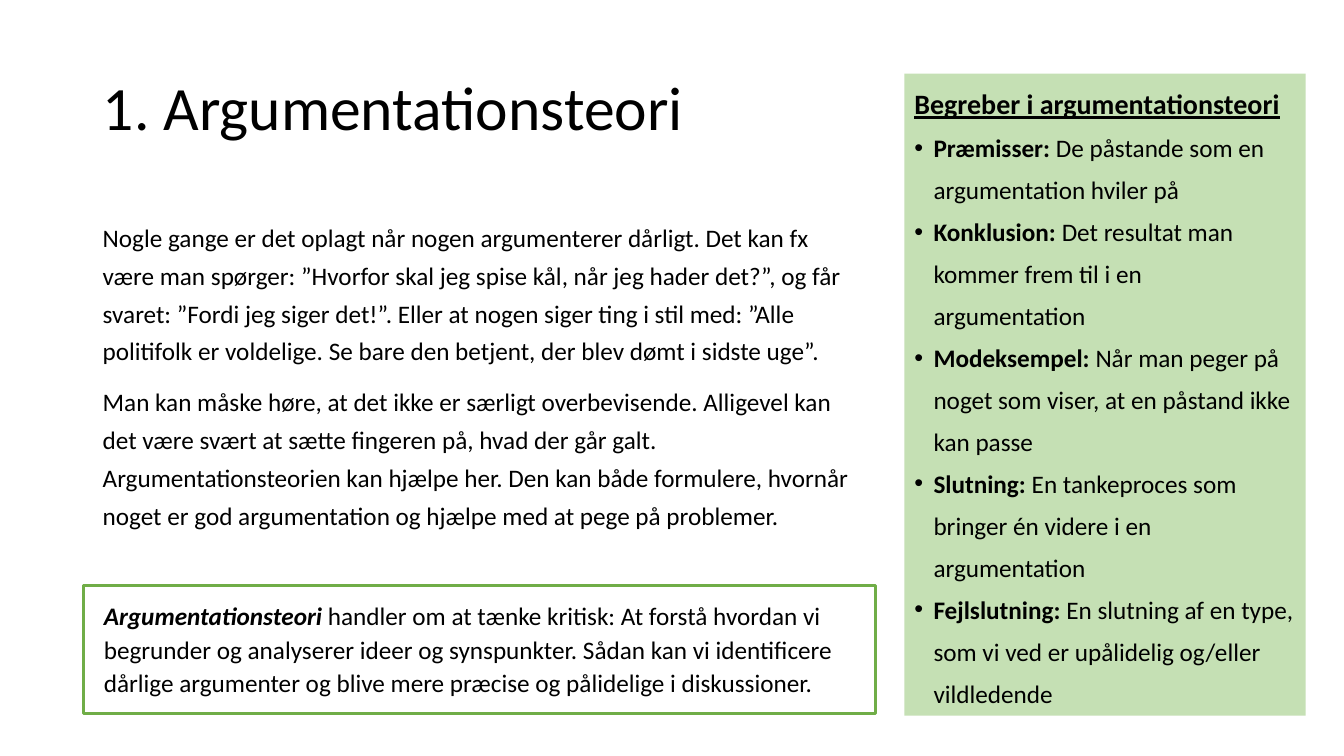
from pptx import Presentation
from pptx.dml.color import RGBColor
from pptx.enum.shapes import MSO_SHAPE
from pptx.enum.text import MSO_ANCHOR, MSO_AUTO_SIZE, PP_ALIGN
from pptx.oxml.ns import qn
from pptx.util import Inches, Pt
from lxml.etree import SubElement

TITLE = "1. Argumentationsteori"
INTRO = [
    "Nogle gange er det oplagt når nogen argumenterer dårligt. Det kan fx være man spørger: "
    "”Hvorfor skal jeg spise kål, når jeg hader det?”, og får svaret: ”Fordi jeg siger det!”. "
    "Eller at nogen siger ting i stil med: ”Alle politifolk er voldelige. Se bare den betjent, "
    "der blev dømt i sidste uge”.",
    "Man kan måske høre, at det ikke er særligt overbevisende. Alligevel kan det være svært at "
    "sætte fingeren på, hvad der går galt. Argumentationsteorien kan hjælpe her. Den kan både "
    "formulere, hvornår noget er god argumentation og hjælpe med at pege på problemer.",
]
CONCEPTS_HEADING = "Begreber i argumentationsteori"
CONCEPTS = [
    ("Præmisser: ", "De påstande som en argumentation hviler på"),
    ("Konklusion: ", "Det resultat man kommer frem til i en argumentation"),
    ("Modeksempel: ", "Når man peger på noget som viser, at en påstand ikke kan passe"),
    ("Slutning: ", "En tankeproces som bringer én videre i en argumentation"),
    ("Fejlslutning: ", "En slutning af en type, som vi ved er upålidelig og/eller vildledende"),
]
DEFINITION = (
    "Argumentationsteori ",
    "handler om at tænke kritisk: At forstå hvordan vi begrunder og analyserer ideer og "
    "synspunkter. Sådan kan vi identificere dårlige argumenter og blive mere præcise og "
    "pålidelige i diskussioner.",
)
BOXES = {
    "title": (0.92, 0.37, 11.5, 1.45),
    "intro": (0.92, 2.08, 7.62, 3.55),
    "concepts": (8.97, 0.73, 3.98, 6.37),
    "definition": (0.83, 5.81, 7.85, 1.27),
}


class Theme:
    font = "Calibri"
    text = RGBColor(0x00, 0x00, 0x00)
    panel = RGBColor(0xC5, 0xE0, 0xB4)
    frame = RGBColor(0x70, 0xAD, 0x47)
    title, heading, body = Pt(44), Pt(20), Pt(18)
    frame_width = Pt(2.25)
    indent = Inches(0.19)


def box(name):
    return [Inches(v) for v in BOXES[name]]


def add_run(p, text, size=Theme.body, **style):
    r = p.add_run()
    r.text = text
    r.font.color.rgb = Theme.text
    for key, value in {"name": Theme.font, "size": size, **style}.items():
        setattr(r.font, key, value)


def setup(tf, **style):
    defaults = {"word_wrap": True, "auto_size": MSO_AUTO_SIZE.NONE,
                "vertical_anchor": MSO_ANCHOR.TOP}
    for key, value in {**defaults, **style}.items():
        setattr(tf, key, value)


def next_paragraph(tf, spacing):
    p = tf.add_paragraph() if tf.paragraphs[0].runs else tf.paragraphs[0]
    p.alignment = PP_ALIGN.LEFT
    p.line_spacing = spacing
    return p


def add_bullet(p):
    pPr = p._p.get_or_add_pPr()
    pPr.set("marL", str(Theme.indent))
    pPr.set("indent", str(-Theme.indent))
    SubElement(pPr, qn("a:buFont")).set("typeface", "Arial")
    SubElement(pPr, qn("a:buChar")).set("char", "•")


def add_rectangle(slide, name):
    s = slide.shapes.add_shape(MSO_SHAPE.RECTANGLE, *box(name))
    s.shadow.inherit = False
    return s


def add_title(slide):
    s = slide.shapes.title
    s.left, s.top, s.width, s.height = box("title")
    setup(s.text_frame, vertical_anchor=MSO_ANCHOR.MIDDLE)
    add_run(next_paragraph(s.text_frame, 0.9), TITLE, Theme.title)


def add_intro(slide):
    tf = slide.shapes.add_textbox(*box("intro")).text_frame
    setup(tf)
    for i, text in enumerate(INTRO):
        p = next_paragraph(tf, Pt(27))
        p.space_before = Pt(9.5 if i else 0)
        add_run(p, text)


def add_concepts(slide):
    s = add_rectangle(slide, "concepts")
    s.fill.solid()
    s.fill.fore_color.rgb = Theme.panel
    s.line.fill.background()
    tf = s.text_frame
    setup(tf)
    add_run(next_paragraph(tf, Pt(30)), CONCEPTS_HEADING, Theme.heading, bold=True, underline=True)
    for term, meaning in CONCEPTS:
        p = next_paragraph(tf, Pt(30))
        add_bullet(p)
        add_run(p, term, bold=True)
        add_run(p, meaning)


def add_definition(slide):
    s = add_rectangle(slide, "definition")
    s.fill.background()
    s.line.color.rgb = Theme.frame
    s.line.width = Theme.frame_width
    setup(s.text_frame, margin_left=Inches(0.2), margin_right=Inches(0.2),
          margin_top=Inches(0.12), margin_bottom=Inches(0.12))
    p = next_paragraph(s.text_frame, 1.1)
    term, meaning = DEFINITION
    add_run(p, term, bold=True, italic=True)
    add_run(p, meaning)


def main():
    prs = Presentation()
    prs.slide_width, prs.slide_height = Inches(13.33), Inches(7.5)
    slide = prs.slides.add_slide(prs.slide_layouts[5])
    for add_part in (add_title, add_intro, add_concepts, add_definition):
        add_part(slide)
    prs.save("out.pptx")


if __name__ == "__main__":
    main()
